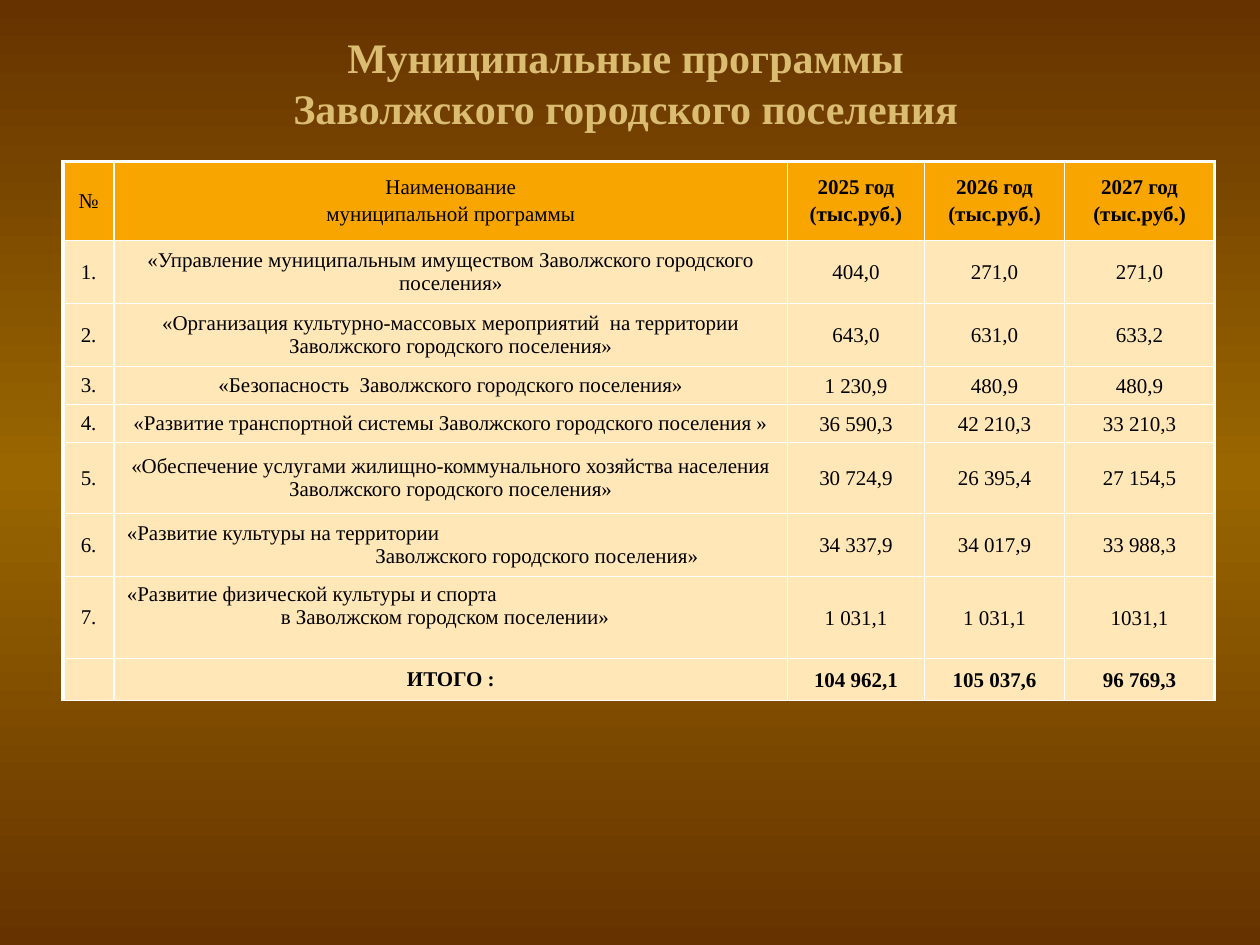
from copy import deepcopy
from dataclasses import dataclass

from lxml import etree
from pptx import Presentation
from pptx.dml.color import RGBColor
from pptx.enum.text import MSO_ANCHOR, PP_ALIGN
from pptx.oxml.ns import qn
from pptx.util import Pt

CENTER, LEFT = PP_ALIGN.CENTER, PP_ALIGN.LEFT
MIDDLE, TOP = MSO_ANCHOR.MIDDLE, MSO_ANCHOR.TOP


@dataclass(frozen=True)
class Theme:
    font: str = "Times New Roman"
    title_size: float = 24
    table_size: float = 12
    title: str = "DBBD71"
    text: str = "000000"
    edge: str = "663300"
    glow: str = "996600"
    header: str = "F8A500"
    body: str = "FFE7B8"
    border: str = "FFFFFF"
    thin: float = 1
    thick: float = 2.25


THEME = Theme()

TITLE = ["Муниципальные программы", "Заволжского городского поселения"]
HEADER = [
    ["№"],
    ["Наименование", "муниципальной программы"],
    ["2025 год", "(тыс.руб.)"],
    ["2026 год", "(тыс.руб.)"],
    ["2027 год", "(тыс.руб.)"],
]
PROGRAMS = [
    (["«Управление муниципальным имуществом Заволжского городского поселения»"],
     "404,0", "271,0", "271,0"),
    (["«Организация культурно-массовых мероприятий  на территории Заволжского городского поселения»"],
     "643,0", "631,0", "633,2"),
    (["«Безопасность  Заволжского городского поселения»"],
     "1 230,9", "480,9", "480,9"),
    (["«Развитие транспортной системы Заволжского городского поселения »"],
     "36 590,3", "42 210,3", "33 210,3"),
    (["«Обеспечение услугами жилищно-коммунального хозяйства населения Заволжского городского поселения»"],
     "30 724,9", "26 395,4", "27 154,5"),
    (["«Развитие культуры на территории", "Заволжского городского поселения»"],
     "34 337,9", "34 017,9", "33 988,3"),
    (["«Развитие физической культуры и спорта", "в Заволжском городском поселении»"],
     "1 031,1", "1 031,1", "1031,1"),
]
TOTAL = [[], ["ИТОГО :"], ["104 962,1"], ["105 037,6"], ["96 769,3"]]
SECOND_LINE_INDENT = {6: 142, 7: 88}
COLUMN_WIDTHS = [29.3, 384.7, 78.4, 80, 85.7]
ROW_HEIGHTS = [45.1, 33.7, 33.7, 20.6, 21.1, 40.6, 35.4, 46.9, 24]


def add_span(para, text, size, color, bold):
    span = para.add_run()
    span.text = text
    span.font.name = THEME.font
    span.font.size = Pt(size)
    span.font.bold = bold
    span.font.color.rgb = RGBColor.from_string(color)


def paint_background(page):
    """Vertical gradient, dark at both ends and lighter in the middle."""
    fill = page.background.fill
    fill.gradient()
    fill.gradient_angle = 270
    for stop in fill.gradient_stops:
        stop.color.rgb = RGBColor.from_string(THEME.edge)
    stops = next(page.element.iter(qn("a:gsLst")))
    stops.insert(1, deepcopy(stops[0]))
    middle = fill.gradient_stops[1]
    middle.position = 0.5
    middle.color.rgb = RGBColor.from_string(THEME.glow)


def add_title(page, left, top, width, height):
    box = page.shapes.add_textbox(Pt(left), Pt(top), Pt(width), Pt(height))
    frame = box.text_frame
    frame.word_wrap = True
    frame.vertical_anchor = TOP
    frame.margin_top = Pt(1.6)
    para = frame.paragraphs[0]
    para.alignment = CENTER
    para.line_spacing = Pt(29.1)
    for number, line in enumerate(TITLE):
        if number:
            para.add_line_break()
        add_span(para, line, THEME.title_size, THEME.title, True)


def set_borders(cell, widths):
    """Draw the left, right, top and bottom lines, in that order."""
    properties = cell._tc.get_or_add_tcPr()
    for index, (side, width) in enumerate(zip("LRTB", widths)):
        line = etree.Element(qn(f"a:ln{side}"), w=str(Pt(width)))
        solid = etree.SubElement(line, qn("a:solidFill"))
        etree.SubElement(solid, qn("a:srgbClr"), val=THEME.border)
        properties.insert(index, line)


def fill_cell(cell, lines, color, bold, roomy, indent):
    """Write the lines; an indent sets them left and shifts all but the first."""
    cell.fill.solid()
    cell.fill.fore_color.rgb = RGBColor.from_string(color)
    cell.vertical_anchor = MIDDLE
    cell.margin_left = cell.margin_right = Pt(7.2 if roomy else 0.7)
    cell.margin_top = Pt(3.6 if roomy else 0.7)
    cell.margin_bottom = Pt(3.6 if roomy else 0)
    frame = cell.text_frame
    for number, line in enumerate(lines):
        para = frame.add_paragraph() if number else frame.paragraphs[0]
        para.alignment = LEFT if indent else CENTER
        if number and indent:
            para._p.get_or_add_pPr().set("marL", str(Pt(indent)))
        elif number:
            para.space_before = Pt(2.4)
        add_span(para, line, THEME.table_size, THEME.text, bold)


def add_program_table(page, left, top):
    rows = [HEADER]
    for number, (name, *amounts) in enumerate(PROGRAMS, 1):
        rows.append([[f"{number}."], name] + [[amount] for amount in amounts])
    rows.append(TOTAL)
    frame = page.shapes.add_table(len(rows), len(HEADER), Pt(left), Pt(top),
                                  Pt(sum(COLUMN_WIDTHS)), Pt(sum(ROW_HEIGHTS)))
    table = frame.table
    for column, width in zip(table.columns, COLUMN_WIDTHS):
        column.width = Pt(width)
    for row, height in zip(table.rows, ROW_HEIGHTS):
        row.height = Pt(height)

    last_column = len(HEADER) - 1
    for r, row in enumerate(rows):
        is_header, is_total = r == 0, r == len(rows) - 1
        for c, lines in enumerate(row):
            cell = table.cell(r, c)
            fill_cell(
                cell, lines,
                color=THEME.header if is_header else THEME.body,
                bold=is_total or (is_header and c > 1),
                roomy=bool(lines) and (is_header or c < 2),
                indent=SECOND_LINE_INDENT.get(r, 0) if c == 1 else 0,
            )
            outer = (c == 0, c == last_column, is_header, False)
            set_borders(cell, [THEME.thick if edge else THEME.thin for edge in outer])
    table.cell(len(PROGRAMS), 1).vertical_anchor = TOP


def main():
    deck = Presentation()
    deck.slide_width, deck.slide_height = Pt(720), Pt(540)
    page = deck.slides.add_slide(deck.slide_layouts[6])
    paint_background(page)
    add_title(page, 36, 16, 643, 90)
    add_program_table(page, 36, 92.4)
    deck.save("out.pptx")


if __name__ == "__main__":
    main()
